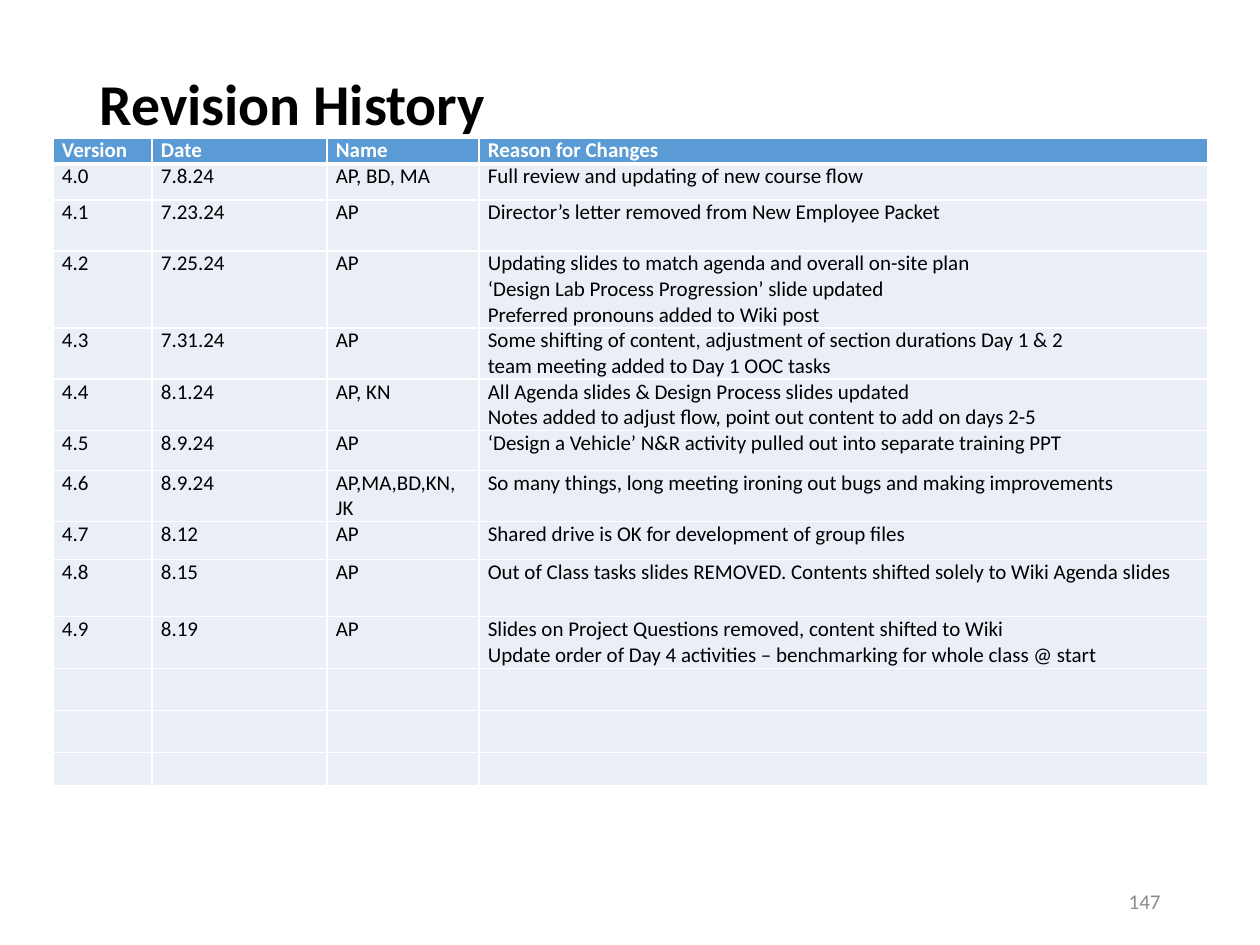
import pptx
import pptx.util
import pptx.dml.color
import pptx.enum.text
import pptx.oxml
import pptx.oxml.ns

PX = 914400 // 126
ALIGN = pptx.enum.text.PP_ALIGN
ANCHOR = pptx.enum.text.MSO_ANCHOR


def color(value):
    return pptx.dml.color.RGBColor.from_string(value)


def write(frame, text, size=12, ink="000000", bold=False, align=ALIGN.LEFT, spacing=1.0):
    for index, line in enumerate(text.split("\n")):
        paragraph = frame.add_paragraph() if index else frame.paragraphs[0]
        paragraph.alignment = align
        paragraph.line_spacing = spacing
        if not line:
            end = pptx.oxml.parse_xml(f'<a:endParaRPr {pptx.oxml.ns.nsdecls("a")} sz="{size * 100}"/>')
            paragraph._p.append(end)
            continue
        run = paragraph.add_run()
        run.text = line
        run.font.name = "Calibri"
        run.font.size = pptx.util.Pt(size)
        run.font.bold = bold
        run.font.color.rgb = color(ink)


deck = pptx.Presentation()
deck.slide_width = 1260 * PX
deck.slide_height = 945 * PX
slide = deck.slides.add_slide(deck.slide_layouts[5])

heading = slide.shapes.title
heading.left, heading.top, heading.width, heading.height = 87 * PX, 50 * PX, 1086 * PX, 183 * PX
heading.text_frame.vertical_anchor = ANCHOR.TOP
heading.text_frame.margin_top = 26 * PX
heading.text_frame.auto_size = pptx.enum.text.MSO_AUTO_SIZE.NONE
write(heading.text_frame, "Revision History", size=33, bold=True, spacing=0.9)

revisions = [
    ("Version", "Date", "Name", "Reason for Changes"),
    ("4.0", "7.8.24", "AP, BD, MA", "Full review and updating of new course flow"),
    ("4.1", "7.23.24", "AP", "Director’s letter removed from New Employee Packet"),
    ("4.2", "7.25.24", "AP", "Updating slides to match agenda and overall on-site plan\n"
     "‘Design Lab Process Progression’ slide updated\nPreferred pronouns added to Wiki post"),
    ("4.3", "7.31.24", "AP", "Some shifting of content, adjustment of section durations Day 1 & 2\n"
     "team meeting added to Day 1 OOC tasks"),
    ("4.4", "8.1.24", "AP, KN", "All Agenda slides & Design Process slides updated\n"
     "Notes added to adjust flow, point out content to add on days 2-5"),
    ("4.5", "8.9.24", "AP", "‘Design a Vehicle’ N&R activity pulled out into separate training PPT"),
    ("4.6", "8.9.24", "AP,MA,BD,KN, JK", "So many things, long meeting ironing out bugs and making improvements"),
    ("4.7", "8.12", "AP", "Shared drive is OK for development of group files"),
    ("4.8", "8.15", "AP", "Out of Class tasks slides REMOVED. Contents shifted solely to Wiki Agenda slides"),
    ("4.9", "8.19", "AP", "Slides on Project Questions removed, content shifted to Wiki\n"
     "Update order of Day 4 activities – benchmarking for whole class @ start"),
] + [("",) * 4] * 3
column_widths = [99, 175, 152, 729]
row_heights = [26, 36, 51, 77, 51, 51, 40, 51, 38, 57, 52, 42, 42, 33]

history = slide.shapes.add_table(
    len(revisions), len(column_widths), 53 * PX, 138 * PX,
    sum(column_widths) * PX, sum(row_heights) * PX).table
history.horz_banding = False
for column, width in zip(history.columns, column_widths):
    column.width = width * PX
for row, height in zip(history.rows, row_heights):
    row.height = height * PX

for row_index, revision in enumerate(revisions):
    is_header = row_index == 0
    for column_index, entry in enumerate(revision):
        cell = history.cell(row_index, column_index)
        cell.margin_left = cell.margin_right = 9 * PX
        cell.margin_top = cell.margin_bottom = 0
        cell.fill.solid()
        cell.fill.fore_color.rgb = color("5B9BD5" if is_header else "EAEFF7")
        write(cell.text_frame, entry, ink="FFFFFF" if is_header else "000000", bold=is_header)
        border_points = {"lnL": 1, "lnR": 1, "lnT": 3 if row_index == 1 else 1, "lnB": 3 if is_header else 1}
        for position, (side, points) in enumerate(border_points.items()):
            border = pptx.oxml.parse_xml(
                f'<a:{side} {pptx.oxml.ns.nsdecls("a")} w="{points * 12700}">'
                f'<a:solidFill><a:srgbClr val="FFFFFF"/></a:solidFill></a:{side}>')
            cell._tc.get_or_add_tcPr().insert(position, border)

page_number = slide.shapes.add_textbox(890 * PX, 876 * PX, 283 * PX, 50 * PX).text_frame
page_number.word_wrap = True
page_number.vertical_anchor = ANCHOR.MIDDLE
write(page_number, "147", ink="8C8C8C", align=ALIGN.RIGHT)

deck.save("out.pptx")
